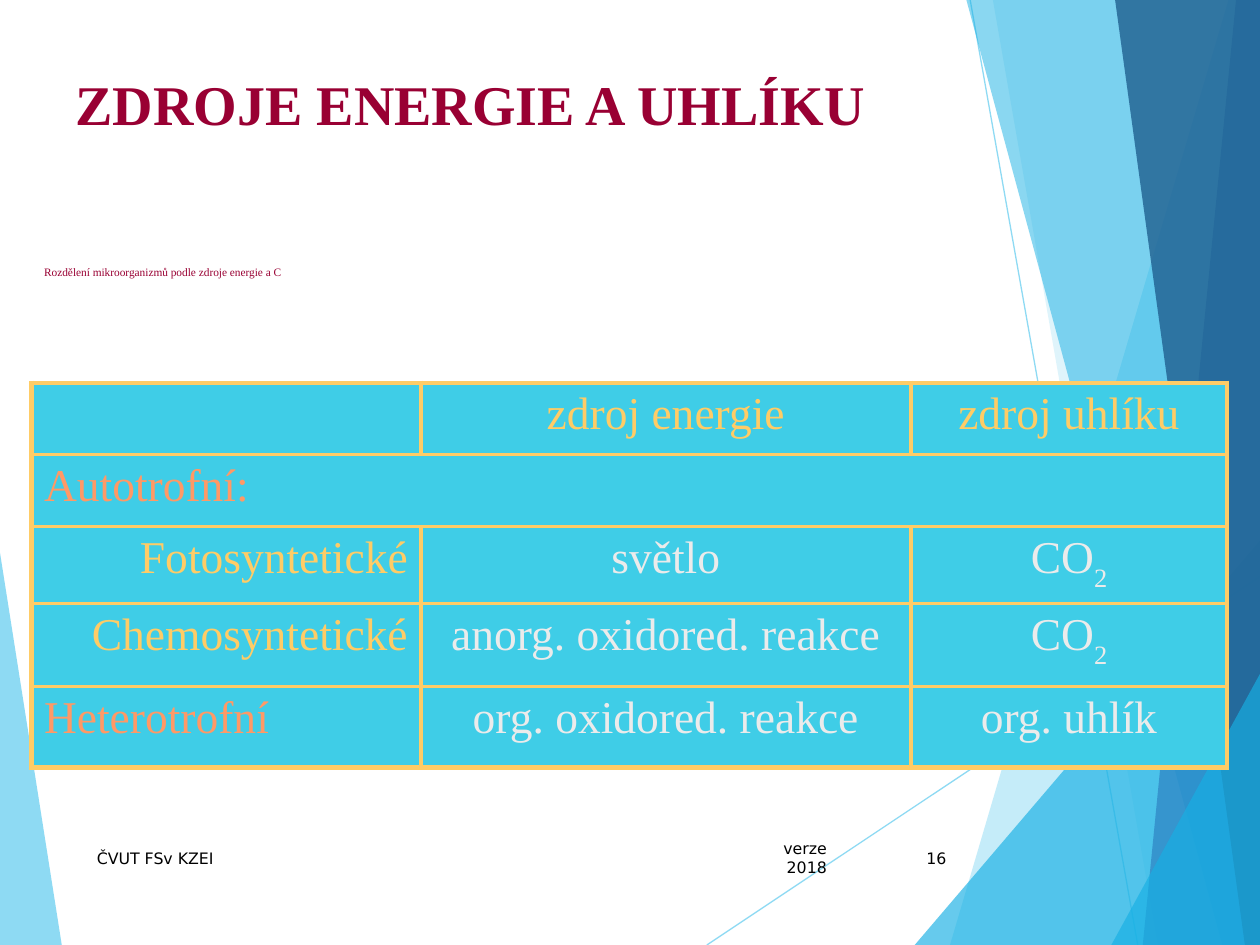
from dataclasses import dataclass

from lxml.etree import SubElement
from pptx import Presentation
from pptx.dml.color import RGBColor as Rgb
from pptx.enum.text import MSO_ANCHOR as Anchor, MSO_AUTO_SIZE as AutoSize, PP_ALIGN as Align
from pptx.enum.shapes import MSO_CONNECTOR as Connector
from pptx.oxml.ns import qn
from pptx.util import Inches, Pt

WIDTH, HEIGHT = Inches(10), Inches(7.5)


@dataclass(frozen=True)
class Theme:
    serif: str = "Times New Roman"
    sans: str = "DejaVu Sans"
    heading: str = "990033"
    footer: str = "000000"
    sky: str = "5FCBEF"
    azure: str = "17B0E4"
    blue: str = "2E83C3"
    navy: str = "226292"
    cell: str = "3FCDE7"
    gold: str = "FFCC66"
    orange: str = "FF9966"
    pale: str = "EBEBEB"
    title_size: float = 32
    body_size: float = 6.5
    table_size: float = 26
    footer_size: float = 9
    facet_line: float = 0.75
    outer_border: float = 3
    inner_border: float = 2.25


THEME = Theme()


def across(percent):
    return round(WIDTH * percent / 100)


def down(percent):
    return round(HEIGHT * percent / 100)


def area(left, top, width, height):
    return across(left), down(top), across(width), down(height)


def set_opacity(properties, percent):
    color = next(properties.iter(qn("a:srgbClr")))
    SubElement(color, qn("a:alpha"), val=str(percent * 1000))


def style_runs(paragraph, font_name, size, color, bold=False):
    for run in paragraph.runs:
        run.font.name = font_name
        run.font.size = Pt(size)
        run.font.bold = bold
        run.font.color.rgb = Rgb.from_string(color)


def add_facet(slide, corners, color, opacity):
    points = [(across(x), down(y)) for x, y in corners]
    builder = slide.shapes.build_freeform(*points[0])
    builder.add_line_segments(points[1:], close=True)
    facet = builder.convert_to_shape()
    facet.shadow.inherit = False
    facet.fill.solid()
    facet.fill.fore_color.rgb = Rgb.from_string(color)
    facet.line.fill.background()
    set_opacity(facet.fill._xPr, opacity)


def add_strip(slide, top, bottom, color, opacity):
    add_facet(slide, [(top, 0), (bottom, 100), (100, 100), (100, 0)], color, opacity)


def add_corner(slide, bottom, side, color, opacity):
    add_facet(slide, [(bottom, 100), (100, side), (100, 100)], color, opacity)


def add_ray(slide, start, end):
    ray = slide.shapes.add_connector(
        Connector.STRAIGHT, across(start[0]), down(start[1]), across(end[0]), down(end[1])
    )
    ray.line.width = Pt(THEME.facet_line)
    ray.line.color.rgb = Rgb.from_string(THEME.sky)
    properties = ray._element.spPr
    set_opacity(properties, 70)
    SubElement(properties, qn("a:effectLst"))


def add_backdrop(slide):
    add_facet(slide, [(0, 58.5), (4.9, 100), (0, 100)], THEME.sky, 70)
    add_ray(slide, (56.1, 100), (100, 61))
    add_ray(slide, (77, 0), (90.3, 100))
    add_strip(slide, 97.5, 75.4, THEME.sky, 36)
    add_strip(slide, 78.8, 91.9, THEME.sky, 20)
    add_corner(slide, 72.6, 57.2, THEME.azure, 66)
    add_strip(slide, 76.7, 97, THEME.azure, 50)
    add_strip(slide, 98.1, 90.7, THEME.blue, 70)
    add_strip(slide, 88.5, 98.8, THEME.navy, 82)
    add_corner(slide, 88.2, 71.3, THEME.azure, 66)


def fill_placeholder(placeholder, text, box, size, align, bold=False):
    placeholder.left, placeholder.top, placeholder.width, placeholder.height = box
    frame = placeholder.text_frame
    frame.text = text
    frame.word_wrap = True
    frame.auto_size = AutoSize.NONE
    frame.vertical_anchor = Anchor.TOP
    paragraph = frame.paragraphs[0]
    paragraph.alignment = align
    paragraph.space_before = Pt(0)
    style_runs(paragraph, THEME.serif, size, THEME.heading, bold)
    return paragraph


def add_heading(slide):
    fill_placeholder(
        slide.shapes.title, "ZDROJE ENERGIE A UHLÍKU",
        area(5, 6.67, 89.1, 11.87), THEME.title_size, Align.LEFT, bold=True,
    )
    subtitle = fill_placeholder(
        slide.placeholders[1], "Rozdělení mikroorganizmů podle zdroje energie a C",
        area(2.5, 27.73, 97.5, 13.33), THEME.body_size, Align.JUSTIFY,
    )
    subtitle.line_spacing = 0.7
    properties = subtitle._p.get_or_add_pPr()
    properties.set("marL", str(Inches(0.38)))
    properties.set("indent", str(-Inches(0.38)))
    SubElement(properties, qn("a:buNone"))


def add_footer(slide, text, left, width, align):
    frame = slide.shapes.add_textbox(*area(left, 88.13, width, 5.33)).text_frame
    frame.word_wrap = True
    frame.vertical_anchor = Anchor.MIDDLE
    frame.text = text
    frame.paragraphs[0].alignment = align
    style_runs(frame.paragraphs[0], THEME.sans, THEME.footer_size, THEME.footer)


def set_borders(cell, outer_sides):
    properties = cell._tc.get_or_add_tcPr()
    for side in "LRTB":
        width = THEME.outer_border if side in outer_sides else THEME.inner_border
        border = SubElement(properties, qn(f"a:ln{side}"), w=str(Pt(width)))
        SubElement(SubElement(border, qn("a:solidFill")), qn("a:srgbClr"), val=THEME.gold)


def fill_cell(cell, text, align, color):
    cell.fill.solid()
    cell.fill.fore_color.rgb = Rgb.from_string(THEME.cell)
    paragraph = cell.text_frame.paragraphs[0]
    paragraph.alignment = align
    base, _, subscript = text.partition("_")
    for part in filter(None, (base, subscript)):
        paragraph.add_run().text = part
    style_runs(paragraph, THEME.serif, THEME.table_size, color)
    if subscript:
        paragraph.runs[-1].font._element.set("baseline", "-30000")


def add_source_table(slide):
    header = (Align.CENTER, THEME.gold)
    group = (Align.JUSTIFY, THEME.orange)
    subgroup = (Align.RIGHT, THEME.gold)
    value = (Align.CENTER, THEME.pale)
    content = [
        (("", "zdroj energie", "zdroj uhlíku"), header, header),
        (("Autotrofní:", "", ""), group, value),
        (("Fotosyntetické", "světlo", "CO_2"), subgroup, value),
        (("Chemosyntetické", "anorg. oxidored. reakce", "CO_2"), subgroup, value),
        (("Heterotrofní", "org. oxidored. reakce", "org. uhlík"), group, value),
    ]
    widths = [30.9, 38.9, 25.1]
    heights = [7.6, 7.6, 7.87, 8.8, 8.53]
    table = slide.shapes.add_table(
        len(heights), len(widths), *area(2.5, 40.53, sum(widths), sum(heights))
    ).table
    table.first_row = table.horz_banding = False
    for column, width in zip(table.columns, widths):
        column.width = across(width)
    for row, height in zip(table.rows, heights):
        row.height = down(height)
    table.cell(1, 0).merge(table.cell(1, 2))

    for r, (texts, label_style, value_style) in enumerate(content):
        for c, text in enumerate(texts):
            cell = table.cell(r, c)
            if cell.is_spanned:
                continue
            at_edge = {
                "L": c == 0,
                "R": c == len(widths) - 1 or cell.is_merge_origin,
                "T": r == 0,
                "B": r == len(heights) - 1,
            }
            set_borders(cell, [side for side, outer in at_edge.items() if outer])
            fill_cell(cell, text, *(value_style if c else label_style))


def main():
    deck = Presentation()
    deck.slide_width, deck.slide_height = WIDTH, HEIGHT
    slide = deck.slides.add_slide(deck.slide_layouts[1])
    add_backdrop(slide)
    add_heading(slide)
    add_footer(slide, "verze 2018", 59.1, 7.5, Align.RIGHT)
    add_footer(slide, "ČVUT FSv KZEI", 6.7, 50.6, Align.LEFT)
    add_footer(slide, "16", 70.5, 5.6, Align.RIGHT)
    add_source_table(slide)
    deck.save("out.pptx")


if __name__ == "__main__":
    main()
